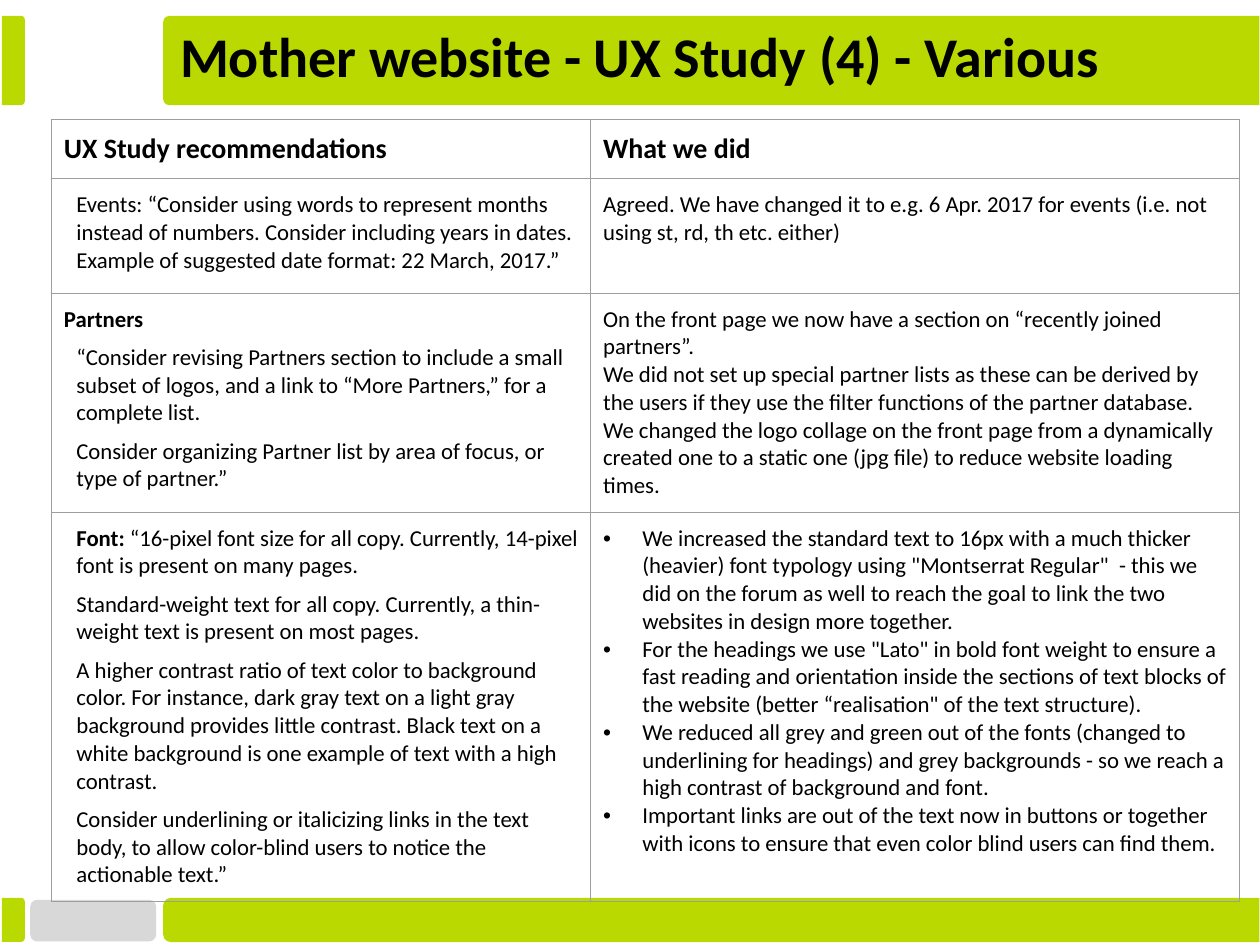
from dataclasses import dataclass

from lxml import etree
from pptx import Presentation
from pptx import util as u
from pptx.dml import color
from pptx.enum import shapes, text
from pptx.oxml import ns


@dataclass(frozen=True)
class Theme:
    font: str = "Calibri"
    ink: str = "000000"
    green: str = "BAD900"
    grey: str = "D8D8D8"
    rule: str = "9E9E9E"
    title_size: int = 32
    heading_size: int = 16
    body_size: int = 13
    inset: float = 0.25
    rule_width: float = 0.75


THEME = Theme()
BAR_LEFT, BAR_WIDTH = 3.29, 22.1
TAB_LEFT, TAB_WIDTH = 0.04, 0.46
COLUMN_WIDTHS = (10.87, 13.08)
ROW_HEIGHTS = (1.14, 2.31, 4.39, 7.04)

HEADINGS = ("UX Study recommendations", "What we did")
ROWS = [
    (
        [("indented", "", "Events: “Consider using words to represent months instead of numbers. "
          "Consider including years in dates. Example of suggested date format: 22 March, 2017.”")],
        [("plain", "", "Agreed. We have changed it to e.g. 6 Apr. 2017 for events "
          "(i.e. not using st, rd, th etc. either)")],
    ),
    (
        [
            ("plain", "Partners", ""),
            ("indented", "", "“Consider revising Partners section to include a small subset of logos, "
             "and a link to “More Partners,” for a complete list."),
            ("indented", "", "Consider organizing Partner list by area of focus, or type of partner.”"),
        ],
        [
            ("plain", "", "On the front page we now have a section on “recently joined partners”."),
            ("plain", "", "We did not set up special partner lists as these can be derived by the users "
             "if they use the filter functions of the partner database."),
            ("plain", "", "We changed the logo collage on the front page from a dynamically created one "
             "to a static one (jpg file) to reduce website loading times."),
        ],
    ),
    (
        [
            ("indented", "Font:", " “16-pixel font size for all copy. Currently, 14-pixel font is present "
             "on many pages."),
            ("indented", "", "Standard-weight text for all copy. Currently, a thin-weight text is present "
             "on most pages."),
            ("indented", "", "A higher contrast ratio of text color to background color. For instance, "
             "dark gray text on a light gray background provides little contrast. Black text on a white "
             "background is one example of text with a high contrast."),
            ("indented", "", "Consider underlining or italicizing links in the text body, to allow "
             "color-blind users to notice the actionable text.”"),
        ],
        [
            ("bullet", "", 'We increased the standard text to 16px with a much thicker (heavier) font '
             'typology using "Montserrat Regular"  - this we did on the forum as well to reach the goal '
             'to link the two websites in design more together.'),
            ("bullet", "", 'For the headings we use "Lato" in bold font weight to ensure a fast reading '
             'and orientation inside the sections of text blocks of the website (better “realisation" '
             'of the text structure).'),
            ("bullet", "", "We reduced all grey and green out of the fonts (changed to underlining for "
             "headings) and grey backgrounds - so we reach a high contrast of background and font."),
            ("bullet", "", "Important links are out of the text now in buttons or together with icons "
             "to ensure that even color blind users can find them."),
        ],
    ),
]


def add_run(paragraph, words, size, bold=False):
    run = paragraph.add_run()
    run.text = words
    run.font.name = THEME.font
    run.font.size = u.Pt(size)
    run.font.bold = bold
    run.font.color.rgb = color.RGBColor.from_string(THEME.ink)


def set_indent(paragraph, margin, first_line=0.0):
    properties = paragraph._p.get_or_add_pPr()
    properties.set("marL", str(u.Cm(margin)))
    properties.set("indent", str(u.Cm(first_line)))
    return properties


def set_insets(target):
    target.margin_left = target.margin_right = u.Cm(THEME.inset)
    target.margin_top = target.margin_bottom = u.Cm(THEME.inset)


def add_block(slide, kind, box, fill, adjustment, rotation=0):
    left, top, width, height = box
    if rotation:
        left, top = left + (width - height) / 2, top + (height - width) / 2
        width, height = height, width
    shape = slide.shapes.add_shape(kind, u.Cm(left), u.Cm(top), u.Cm(width), u.Cm(height))
    shape.shadow.inherit = False
    shape.rotation = rotation
    shape.adjustments[0] = adjustment
    shape.fill.solid()
    shape.fill.fore_color.rgb = color.RGBColor.from_string(fill)
    shape.line.fill.background()


def add_band(slide, top, height, bar_adjustment):
    kind = shapes.MSO_SHAPE.ROUND_2_SAME_RECTANGLE
    add_block(slide, kind, (BAR_LEFT, top, BAR_WIDTH, height), THEME.green, bar_adjustment, 270)
    add_block(slide, kind, (TAB_LEFT, top, TAB_WIDTH, height), THEME.green, 0.17, 90)


def add_title(slide, box, words):
    shape = slide.shapes.add_textbox(*map(u.Cm, box))
    frame = shape.text_frame
    frame.word_wrap = True
    frame.vertical_anchor = text.MSO_ANCHOR.MIDDLE
    set_insets(frame)
    paragraph = frame.paragraphs[0]
    paragraph.line_spacing = 0.9
    add_run(paragraph, words, THEME.title_size, True)


def style_cell(cell):
    set_insets(cell)
    properties = cell._tc.get_or_add_tcPr()
    for side in ("lnL", "lnR", "lnT", "lnB"):
        line = etree.SubElement(properties, ns.qn(f"a:{side}"), w=str(u.Pt(THEME.rule_width)))
        fill = etree.SubElement(line, ns.qn("a:solidFill"))
        etree.SubElement(fill, ns.qn("a:srgbClr"), val=THEME.rule)
    cell.fill.background()


def fill_cell(cell, entries):
    frame = cell.text_frame
    for index, (style, lead, words) in enumerate(entries):
        paragraph = frame.add_paragraph() if index else frame.paragraphs[0]
        if style == "bullet":
            properties = set_indent(paragraph, 0.79, -0.79)
            etree.SubElement(properties, ns.qn("a:buFont"), typeface="Arial")
            etree.SubElement(properties, ns.qn("a:buChar"), char="•")
        elif style == "indented":
            paragraph.level = 1
            set_indent(paragraph, 0.25)
            if index:
                paragraph.space_before = u.Pt(6)
        if lead:
            add_run(paragraph, lead, THEME.body_size, True)
        if words:
            add_run(paragraph, words, THEME.body_size)


def add_study_table(slide, left, top):
    frame = slide.shapes.add_table(
        len(ROW_HEIGHTS), len(COLUMN_WIDTHS), u.Cm(left), u.Cm(top),
        u.Cm(sum(COLUMN_WIDTHS)), u.Cm(sum(ROW_HEIGHTS)))
    table = frame.table
    table.first_row = table.horz_banding = False
    for column, width in zip(table.columns, COLUMN_WIDTHS):
        column.width = u.Cm(width)
    for row, height in zip(table.rows, ROW_HEIGHTS):
        row.height = u.Cm(height)
    for cell in table.iter_cells():
        style_cell(cell)
    for column, heading in enumerate(HEADINGS):
        paragraph = table.cell(0, column).text_frame.paragraphs[0]
        add_run(paragraph, heading, THEME.heading_size, True)
    for row, contents in enumerate(ROWS, start=1):
        for column, entries in enumerate(contents):
            fill_cell(table.cell(row, column), entries)


def main():
    presentation = Presentation()
    presentation.slide_width, presentation.slide_height = u.Cm(25.4), u.Cm(19.05)
    slide = presentation.slides.add_slide(presentation.slide_layouts[6])
    add_block(slide, shapes.MSO_SHAPE.ROUNDED_RECTANGLE, (0.61, 18.14, 2.54, 0.84), THEME.grey, 0.17)
    add_band(slide, 18.1, 0.89, 0.17)
    add_band(slide, 0.32, 1.8, 0.07)
    add_study_table(slide, 1.04, 2.41)
    add_title(slide, (3.38, 0.38, 23.93, 1.65), "Mother website - UX Study (4) - Various")
    presentation.save("out.pptx")


if __name__ == "__main__":
    main()
